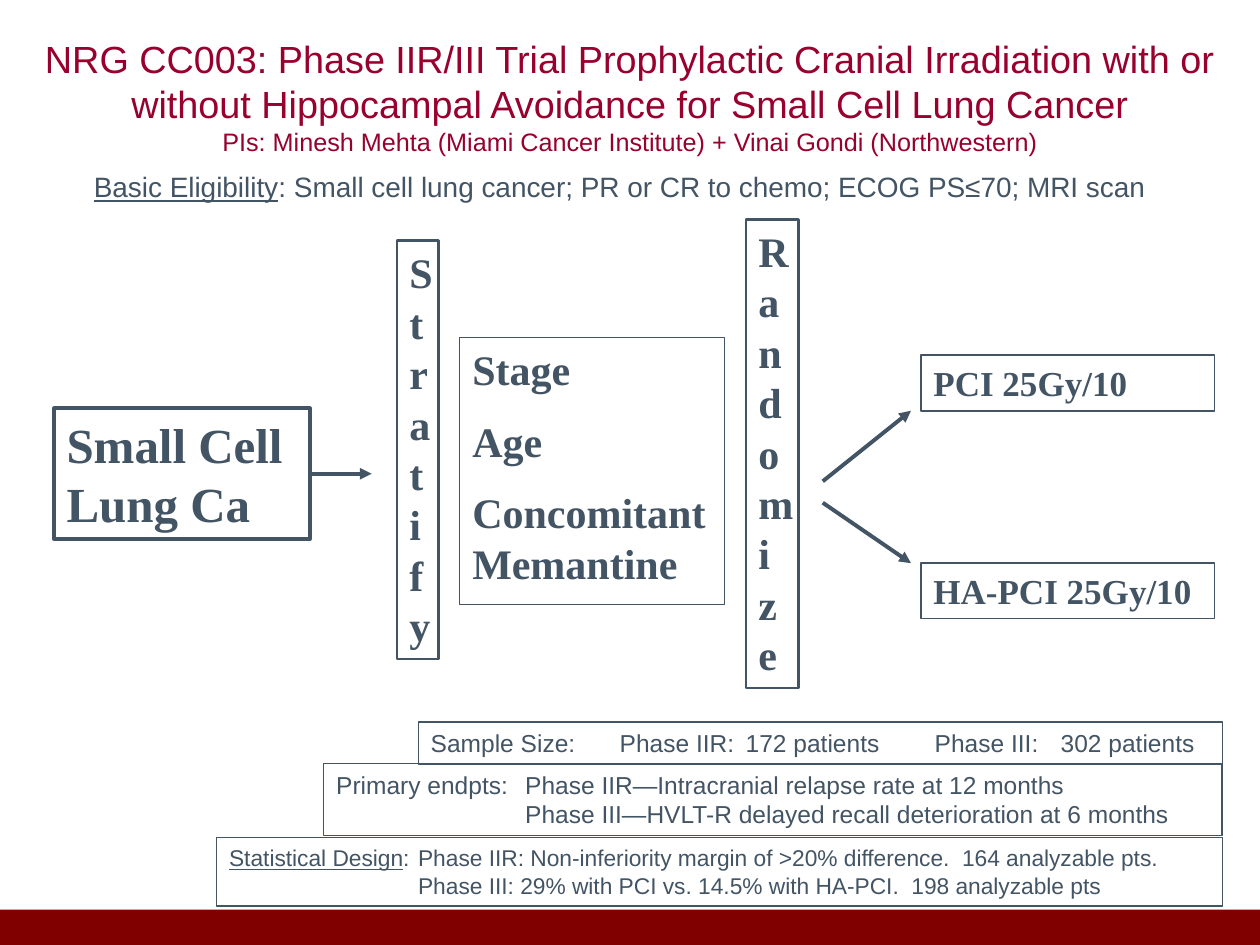
from dataclasses import dataclass

from lxml import etree
from pptx import Presentation
from pptx.dml.color import RGBColor
from pptx.enum import shapes, text
from pptx.oxml.ns import qn
from pptx.util import Inches, Pt


@dataclass(frozen=True)
class Theme:
    ink: RGBColor = RGBColor(0x43, 0x54, 0x64)
    heading: RGBColor = RGBColor(0x98, 0x01, 0x2E)
    footer: RGBColor = RGBColor(0x80, 0, 0)
    sans: str = "Arial"
    serif: str = "Times New Roman"
    title: float = 21.6
    investigators: float = 14.4
    eligibility: float = 16
    population: float = 28
    step: float = 24
    arm: float = 20
    note: float = 14
    design: float = 13


theme = Theme()


def write(frame, paragraphs, size, font=theme.sans, color=theme.ink, bold=False,
          align=text.PP_ALIGN.LEFT, gap=0, tabs=(), lead=""):
    """Fill a text frame; lead is an underlined opening, tabs are stops in inches."""
    frame.word_wrap = True
    frame.auto_size = text.MSO_AUTO_SIZE.NONE
    frame.vertical_anchor = text.MSO_ANCHOR.TOP
    for i, content in enumerate(paragraphs):
        paragraph = frame.add_paragraph() if i else frame.paragraphs[0]
        if tabs:
            stops = etree.SubElement(paragraph._p.get_or_add_pPr(), qn("a:tabLst"))
            for stop in tabs:
                etree.SubElement(stops, qn("a:tab"), pos=str(Inches(stop)), algn="l")
        paragraph.alignment = align
        paragraph.line_spacing = 1.0
        paragraph.space_before = Pt(gap if i else 0)
        pieces = [(lead, True)] if lead and i == 0 else []
        for words, underlined in pieces + [(content, False)]:
            run = paragraph.add_run()
            run.text = words
            run.font.name = font
            run.font.size = Pt(size)
            run.font.bold = bold
            run.font.underline = underlined
            run.font.color.rgb = color


def add_arrow(slide, start, end):
    arrow = slide.shapes.add_connector(
        shapes.MSO_CONNECTOR.STRAIGHT, *map(Inches, start + end))
    arrow.line.color.rgb = theme.ink
    arrow.line.width = Pt(2.25)
    etree.SubElement(arrow.line._get_or_add_ln(), qn("a:tailEnd"), type="triangle")
    etree.SubElement(arrow._element.spPr, qn("a:effectLst"))
    return arrow


prs = Presentation()
prs.slide_width, prs.slide_height = Inches(10), Inches(7.5)
slide = prs.slides.add_slide(prs.slide_layouts[5])

# Heading
title = slide.shapes.title
title.left, title.top, title.width, title.height = map(Inches, (0, 0.25, 10, 1.25))
title.text_frame.margin_top = Inches(0.03)
write(title.text_frame,
      ["NRG CC003: Phase IIR/III Trial Prophylactic Cranial Irradiation with or "
       "without Hippocampal Avoidance for Small Cell Lung Cancer",
       "PIs: Minesh Mehta (Miami Cancer Institute) + Vinai Gondi (Northwestern)"],
      theme.title, color=theme.heading, align=text.PP_ALIGN.CENTER)
for run in title.text_frame.paragraphs[1].runs:
    run.font.size = Pt(theme.investigators)

eligibility = slide.shapes.add_textbox(*map(Inches, (0.3, 1.3, 9.24, 0.37)))
write(eligibility.text_frame,
      [": Small cell lung cancer; PR or CR to chemo; ECOG PS≤70; MRI scan"],
      theme.eligibility, align=text.PP_ALIGN.CENTER, lead="Basic Eligibility")

footer = slide.shapes.add_shape(
    shapes.MSO_SHAPE.RECTANGLE, *map(Inches, (0, 7.22, 10, 0.28)))
footer.shadow.inherit = False
footer.fill.solid()
footer.fill.fore_color.rgb = theme.footer
footer.line.fill.background()

# Trial flow, then the notes, which share a right edge
step = dict(font=theme.serif, bold=True, gap=12)
notes_right = 9.7
panels = [
    ((0.43, 3.24, 2.03, 1.04), 2, ["Small Cell Lung Ca"],
     dict(step, size=theme.population)),
    ((3.15, 1.91, 0.33, 3.32), 1.5, ["Stratify"], dict(step, size=theme.step)),
    ((3.65, 2.68, 2.1, 2.12), 0.75, ["Stage", "Age", "Concomitant Memantine"],
     dict(step, size=theme.step)),
    ((5.92, 1.74, 0.42, 3.72), 1.5, ["Randomize"], dict(step, size=theme.step)),
    ((7.31, 2.82, 2.33, 0.44), 1, ["PCI 25Gy/10"], dict(step, size=theme.arm)),
    ((7.31, 4.47, 2.33, 0.44), 1, ["HA-PCI 25Gy/10"], dict(step, size=theme.arm)),
    ((3.32, 5.73, notes_right - 3.32, 0.34), 0.75,
     ["Sample Size:\tPhase IIR:\t172 patients\tPhase III:\t302 patients"],
     dict(size=theme.note, tabs=(1.5, 2.5, 4, 5))),
    ((2.57, 6.06, notes_right - 2.57, 0.57), 0.75,
     ["Primary endpts:\tPhase IIR—Intracranial relapse rate at 12 months",
      "\tPhase III—HVLT-R delayed recall deterioration at 6 months"],
     dict(size=theme.note, tabs=(1.5,))),
    ((1.72, 6.65, notes_right - 1.72, 0.54), 0.75,
     [":\tPhase IIR: Non-inferiority margin of >20% difference.  164 analyzable pts.",
      "\tPhase III: 29% with PCI vs. 14.5% with HA-PCI.  198 analyzable pts"],
     dict(size=theme.design, tabs=(1.5,), lead="Statistical Design")),
]
boxes = []
for place, border, paragraphs, style in panels:
    box = slide.shapes.add_shape(shapes.MSO_SHAPE.RECTANGLE, *map(Inches, place))
    box.shadow.inherit = False
    box.fill.background()
    box.line.color.rgb = theme.ink
    box.line.width = Pt(border)
    write(box.text_frame, paragraphs, **style)
    boxes.append(box)

population = boxes[0]
add_arrow(slide, (2.46, 3.76), (2.95, 3.76)).begin_connect(population, 3)
for start_y, end_y in ((3.82, 3.26), (3.99, 4.47)):
    add_arrow(slide, (6.53, start_y), (7.23, end_y))

prs.save("out.pptx")
